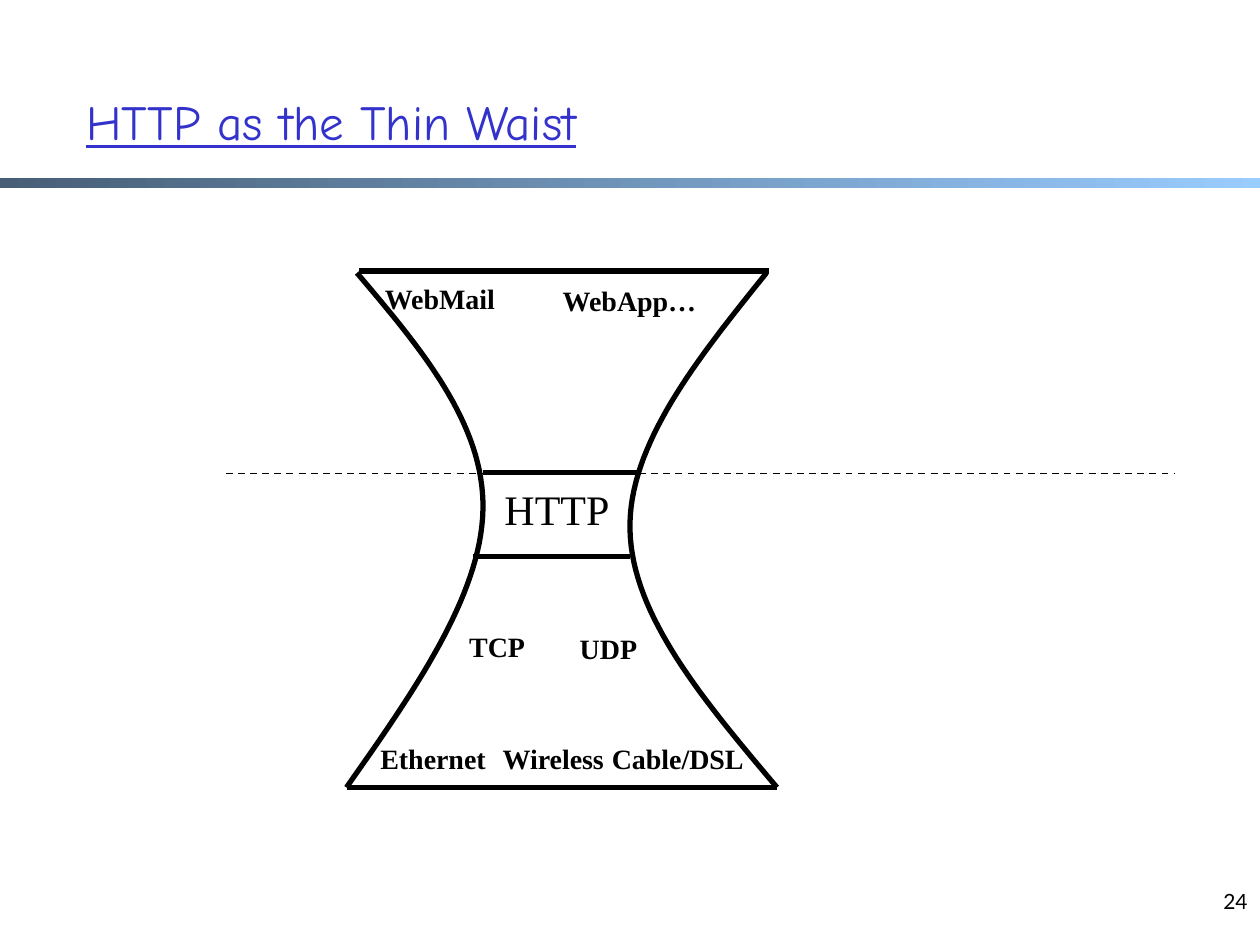
import pptx
import pptx.dml.color
import pptx.enum.dml
import pptx.enum.shapes
import pptx.enum.text
import pptx.oxml.xmlchemy
import pptx.util

BLACK = pptx.dml.color.RGBColor(0x00, 0x00, 0x00)
TITLE_BLUE = pptx.dml.color.RGBColor(0x33, 0x33, 0xCC)
BAR_DARK = pptx.dml.color.RGBColor(0x47, 0x5E, 0x76)
BAR_LIGHT = pptx.dml.color.RGBColor(0x99, 0xCC, 0xFF)
SERIF = "Times New Roman"
ALIGN = pptx.enum.text.PP_ALIGN
ANCHOR = pptx.enum.text.MSO_ANCHOR

COLUMNS, ROWS = 120, 90  # twelve cells to the inch
CURVE_STEPS = 32

# Each side: start, then control, control, end for every cubic piece
LEFT_SIDE = [(34, 26), (40.1, 33.2), (46.2, 40.4), (46, 48.6),
             (45.8, 56.8), (39.4, 65.9), (33, 75)]
RIGHT_SIDE = [(73, 26), (66.4, 34.2), (59.8, 42.4), (60, 50.5),
              (60.2, 58.7), (67.1, 66.8), (74, 75)]

# Left, right and row of the horizontal edges
LAYER_EDGES = [(34.2, 73.2, 25.8), (46, 61, 45), (45, 60, 53), (33, 74, 75)]

# Text, left, top, width
PROTOCOLS = [
    ("WebMail", 35.3, 26.2, 13.2), ("WebApp…", 52.2, 26.4, 15.5),
    ("TCP", 43.5, 59.4, 7.7), ("UDP", 54, 59.6, 7.9),
    ("Ethernet", 35, 70, 12.5), ("Wireless", 46.6, 70, 12.2),
    ("Cable/DSL", 57, 70, 15.1),
]


def cubic_points(anchors):
    """Sample the joined cubic Bezier pieces as a list of points."""
    points = [anchors[0]]
    for first in range(0, len(anchors) - 1, 3):
        piece = anchors[first:first + 4]
        for step in range(1, CURVE_STEPS + 1):
            t = step / CURVE_STEPS
            weights = ((1 - t) ** 3, 3 * t * (1 - t) ** 2, 3 * t * t * (1 - t), t ** 3)
            points.append(tuple(sum(w * point[axis] for w, point in zip(weights, piece))
                                for axis in (0, 1)))
    return points


class Deck:
    def __init__(self):
        self.presentation = pptx.Presentation()
        self.presentation.slide_width = pptx.util.Inches(10)
        self.presentation.slide_height = pptx.util.Inches(7.5)
        self.cell_width = self.presentation.slide_width / COLUMNS
        self.cell_height = self.presentation.slide_height / ROWS
        self.slide = self.presentation.slides.add_slide(
            self.presentation.slide_layouts.get_by_name("Title Only"))

    def spot(self, column, row):
        return round(column * self.cell_width), round(row * self.cell_height)

    def box(self, column, row, columns, rows):
        return *self.spot(column, row), *self.spot(columns, rows)

    def set_text(self, frame, text, size, font, align, color=BLACK, bold=False, underline=False):
        frame.text = text
        paragraph = frame.paragraphs[0]
        paragraph.alignment = align
        style = paragraph.runs[0].font
        style.size, style.name = pptx.util.Pt(size), font
        style.bold, style.underline = bold, underline
        style.color.rgb = color

    def title(self, text, *area):
        heading = self.slide.shapes.title
        heading.left, heading.top, heading.width, heading.height = self.box(*area)
        frame = heading.text_frame
        frame.vertical_anchor = ANCHOR.MIDDLE
        frame.auto_size = pptx.enum.text.MSO_AUTO_SIZE.NONE
        self.set_text(frame, text, 28, "Comic Neue", ALIGN.LEFT, TITLE_BLUE, underline=True)

    def gradient_bar(self, *area):
        bar = self.slide.shapes.add_shape(
            pptx.enum.shapes.MSO_SHAPE.RECTANGLE, *self.box(*area))
        bar.shadow.inherit = False
        bar.line.fill.background()
        bar.fill.gradient()
        bar.fill.gradient_angle = 0
        for stop, position, color in zip(bar.fill.gradient_stops, (0, 1), (BAR_DARK, BAR_LIGHT)):
            stop.position, stop.color.rgb = position, color

    def label(self, text, column, row, columns, rows=4.4, size=16, bold=True):
        frame = self.slide.shapes.add_textbox(*self.box(column, row, columns, rows)).text_frame
        frame.word_wrap = False
        frame.auto_size = pptx.enum.text.MSO_AUTO_SIZE.SHAPE_TO_FIT_TEXT
        self.set_text(frame, text, size, SERIF, ALIGN.CENTER, bold=bold)

    def page_number(self, number, *area):
        frame = self.slide.shapes.add_textbox(*self.box(*area)).text_frame
        frame.word_wrap = True
        self.set_text(frame, number, 12, "Lato", ALIGN.RIGHT)

    def stroke(self, line, weight):
        line.color.rgb = BLACK
        line.width = pptx.util.Pt(weight)

    def horizontal(self, left, right, row, weight=3, dash=None):
        edge = self.slide.shapes.add_connector(
            pptx.enum.shapes.MSO_CONNECTOR.STRAIGHT, *self.spot(left, row), *self.spot(right, row))
        self.stroke(edge.line, weight)
        if dash:
            edge.line.dash_style = dash
        properties = edge._element.spPr
        properties.append(pptx.oxml.xmlchemy.OxmlElement("a:effectLst"))

    def curve(self, anchors):
        start, *rest = [self.spot(*point) for point in cubic_points(anchors)]
        builder = self.slide.shapes.build_freeform(*start)
        builder.add_line_segments(rest, close=False)
        side = builder.convert_to_shape()
        side.shadow.inherit = False
        side.fill.background()
        self.stroke(side.line, 3)


def main():
    deck = Deck()
    deck.gradient_bar(0, 16.95, COLUMNS, 1)
    deck.page_number("24", 92, 84, 28, 6)
    deck.title("HTTP as the Thin Waist", 7, 5, 102, 13)
    deck.horizontal(21.5, 111.8, 45.1, weight=1, dash=pptx.enum.dml.MSO_LINE.DASH)
    for side in (LEFT_SIDE, RIGHT_SIDE):
        deck.curve(side)
    for edge in LAYER_EDGES:
        deck.horizontal(*edge)
    deck.label("HTTP", 46.8, 45.5, 12.5, rows=6, size=24, bold=False)
    for protocol in PROTOCOLS:
        deck.label(*protocol)
    deck.presentation.save("out.pptx")


if __name__ == "__main__":
    main()
